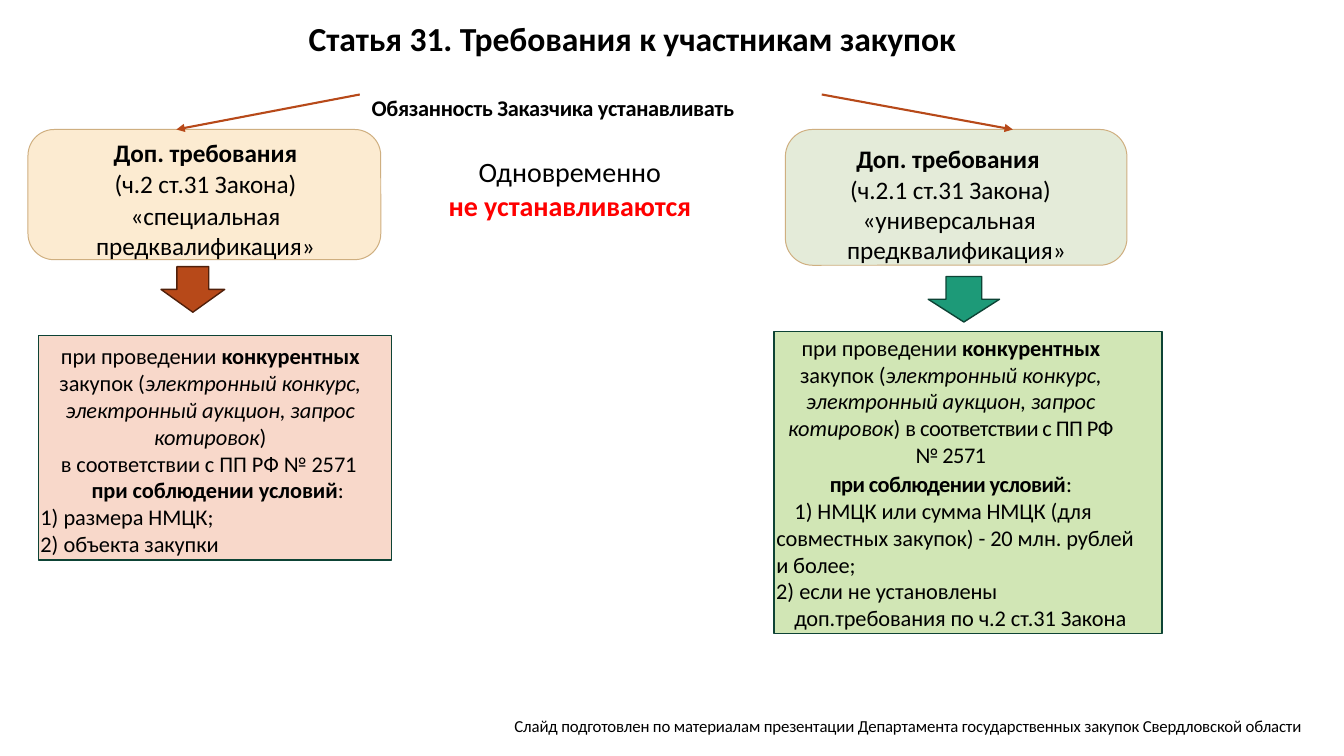
from lxml.etree import SubElement
from pptx import Presentation
from pptx.dml.color import RGBColor
from pptx.enum.shapes import MSO_CONNECTOR, MSO_SHAPE
from pptx.enum.text import MSO_ANCHOR, PP_ALIGN
from pptx.oxml.ns import qn
from pptx.util import Pt

BLACK = RGBColor(0x00, 0x00, 0x00)
RED = RGBColor(0xFF, 0x00, 0x00)
RUST = RGBColor(0xB7, 0x49, 0x19)
DARK_RUST = RGBColor(0x50, 0x20, 0x0B)
GREEN = RGBColor(0x1D, 0x9A, 0x78)
DARK_GREEN = RGBColor(0x0D, 0x43, 0x35)
SAND_LINE = RGBColor(0xCF, 0xAF, 0x80)
SAND = RGBColor(0xFC, 0xEB, 0xD1)
SAGE = RGBColor(0xE4, 0xEB, 0xD9)
PINK = RGBColor(0xF8, 0xD8, 0xCA)
LIME = RGBColor(0xD1, 0xE6, 0xB5)

BOLD = {"bold": True}
ITALIC = {"italic": True}


def add_span(para, text, size=16, bold=False, italic=False, color=BLACK, spacing=-5):
    for index, line in enumerate(text.split("\n")):
        if index:
            para.add_line_break()
        span = para.add_run()
        span.text = line
        span.font.name = "Calibri"
        span.font.size = Pt(size)
        span.font.bold = bold
        span.font.italic = italic
        span.font.color.rgb = color
        span._r.get_or_add_rPr().set("spc", str(spacing))


def add_para(frame, spans, align=PP_ALIGN.LEFT, left=1.5, first=0, right=0,
             before=0, numbered=False, **style):
    para = frame.paragraphs[0]
    if para.runs:
        para = frame.add_paragraph()
    para.alignment = align
    para.space_before = Pt(before)
    properties = para._p.get_or_add_pPr()
    for name, value in (("marL", left), ("indent", first), ("marR", right)):
        properties.set(name, str(Pt(value)))
    if numbered:
        SubElement(properties, qn("a:buAutoNum"), type="arabicParenR")
    else:
        SubElement(properties, qn("a:buNone"))
    for text, extra in spans:
        add_span(para, text, **{**style, **extra})


def set_frame(shape, left=0, top=1.5, right=0, anchor=MSO_ANCHOR.TOP):
    frame = shape.text_frame
    frame.word_wrap = True
    frame.vertical_anchor = anchor
    frame.margin_left, frame.margin_top = Pt(left), Pt(top)
    frame.margin_right, frame.margin_bottom = Pt(right), Pt(0)
    return frame


def add_box(page, kind, box, fill, outline, weight=1):
    shape = page.shapes.add_shape(kind, *map(Pt, box))
    shape.shadow.inherit = False
    shape.fill.solid()
    shape.fill.fore_color.rgb = fill
    shape.line.color.rgb = outline
    shape.line.width = Pt(weight)
    return shape


def add_label(page, box, spans, **style):
    label = page.shapes.add_textbox(*map(Pt, box))
    add_para(set_frame(label), spans, **style)


def add_heading(page, box, fill, **margins):
    shape = add_box(page, MSO_SHAPE.ROUNDED_RECTANGLE, box, fill, SAND_LINE, 0.72)
    shape.adjustments[0] = 0.2
    return set_frame(shape, **margins)


def add_arrow(page, start, end):
    arrow = page.shapes.add_connector(MSO_CONNECTOR.STRAIGHT, *map(Pt, start + end))
    arrow.line.color.rgb = RUST
    arrow.line.width = Pt(1.5)
    SubElement(arrow.line._get_or_add_ln(), qn("a:tailEnd"), type="triangle")
    SubElement(arrow._element.spPr, qn("a:effectLst"))


def add_title(page, box):
    title = page.shapes.title
    title.left, title.top, title.width, title.height = map(Pt, box)
    frame = set_frame(title, top=8, anchor=MSO_ANCHOR.MIDDLE)
    add_para(frame, [("Статья 31. Требования к участникам закупок", BOLD)],
             align=PP_ALIGN.CENTER, left=165, size=24)


def add_special_branch(page, left, top):
    frame = add_heading(page, (left, top, 252, 93), SAND, top=0)
    for text, extra in (("Доп. требования", BOLD), ("(ч.2 ст.31 Закона)", {}),
                        ("«специальная предквалификация»", {})):
        add_para(frame, [(text, extra)], align=PP_ALIGN.CENTER, before=1, size=18)
    add_box(page, MSO_SHAPE.DOWN_ARROW, (left + 95, top + 98, 45.5, 32.5), RUST, DARK_RUST)
    panel = add_box(page, MSO_SHAPE.RECTANGLE, (left + 7.5, top + 147, 252, 160.5),
                    PINK, DARK_GREEN)
    frame = set_frame(panel, top=5)
    add_para(frame, [("при проведении ", {}), ("конкурентных ", BOLD), ("закупок (", {}),
                     ("электронный конкурс, электронный аукцион, запрос котировок", ITALIC),
                     (")", {})], align=PP_ALIGN.CENTER, right=8, before=1.3)
    add_para(frame, [("в соответствии с ПП РФ № 2571", {})], left=16)
    add_para(frame, [("при соблюдении условий", BOLD), (":", {})], left=38)
    for item in (" размера НМЦК;", " объекта закупки"):
        add_para(frame, [(item, {})], left=14.4, first=-13, numbered=True)


def add_universal_branch(page, left, top):
    frame = add_heading(page, (left, top, 244, 97), SAGE, left=37, top=4.5, right=20)
    add_para(frame, [("Доп. требования", BOLD)], left=8, before=1.3, size=18)
    add_para(frame, [("(ч.2.1 ст.31 Закона)", {})], left=3.6, size=18)
    add_para(frame, [("«универсальная предквалификация»", {})], first=11, size=18)
    add_box(page, MSO_SHAPE.DOWN_ARROW, (left + 102, top + 105, 51, 32.5), GREEN, DARK_GREEN)
    panel = add_box(page, MSO_SHAPE.RECTANGLE, (left - 8, top + 144.5, 277, 215.5),
                    LIME, DARK_GREEN)
    frame = set_frame(panel)
    add_para(frame, [("при проведении ", {}), ("конкурентных ", BOLD), ("закупок (", {}),
                     ("электронный конкурс, электронный аукцион, запрос котировок", ITALIC),
                     (") ", {}), ("в соответствии с ПП РФ\n№ 2571", {"spacing": -40})],
             align=PP_ALIGN.CENTER, right=26, before=1.3)
    add_para(frame, [("при соблюдении условий", {**BOLD, "spacing": -40}), (":", {})],
             align=PP_ALIGN.CENTER, right=26, before=1.3)
    add_para(frame, [(" НМЦК или сумма НМЦК (для совместных закупок) - 20 млн. рублей и более;", {})],
             first=13, right=15, numbered=True)
    add_para(frame, [(" если не установлены\nдоп.требования по ч.2 ст.31 Закона", {})],
             left=14.4, first=-13, numbered=True)


def main():
    deck = Presentation()
    deck.slide_width, deck.slide_height = Pt(960), Pt(540)
    page = deck.slides.add_slide(deck.slide_layouts[5])
    add_title(page, (14.5, 4.5, 709, 37.5))
    add_label(page, (264, 66, 300, 25), [("Обязанность Заказчика устанавливать", BOLD)],
              spacing=-20)
    add_special_branch(page, 20, 92.5)
    add_universal_branch(page, 561, 92.5)
    add_label(page, (306.5, 109, 199.5, 50),
              [("Одновременно\n", {}), ("не устанавливаются", {"bold": True, "color": RED})],
              align=PP_ALIGN.CENTER, before=1.4, size=20)
    add_arrow(page, (257, 67.5), (126, 92.5))
    add_arrow(page, (587, 67.5), (723.5, 92.5))
    add_label(page, (366, 510, 592, 22),
              [("Слайд подготовлен по материалам презентации Департамента "
                "государственных закупок Свердловской области", {})],
              size=12, spacing=-10)
    deck.save("out.pptx")


if __name__ == "__main__":
    main()
